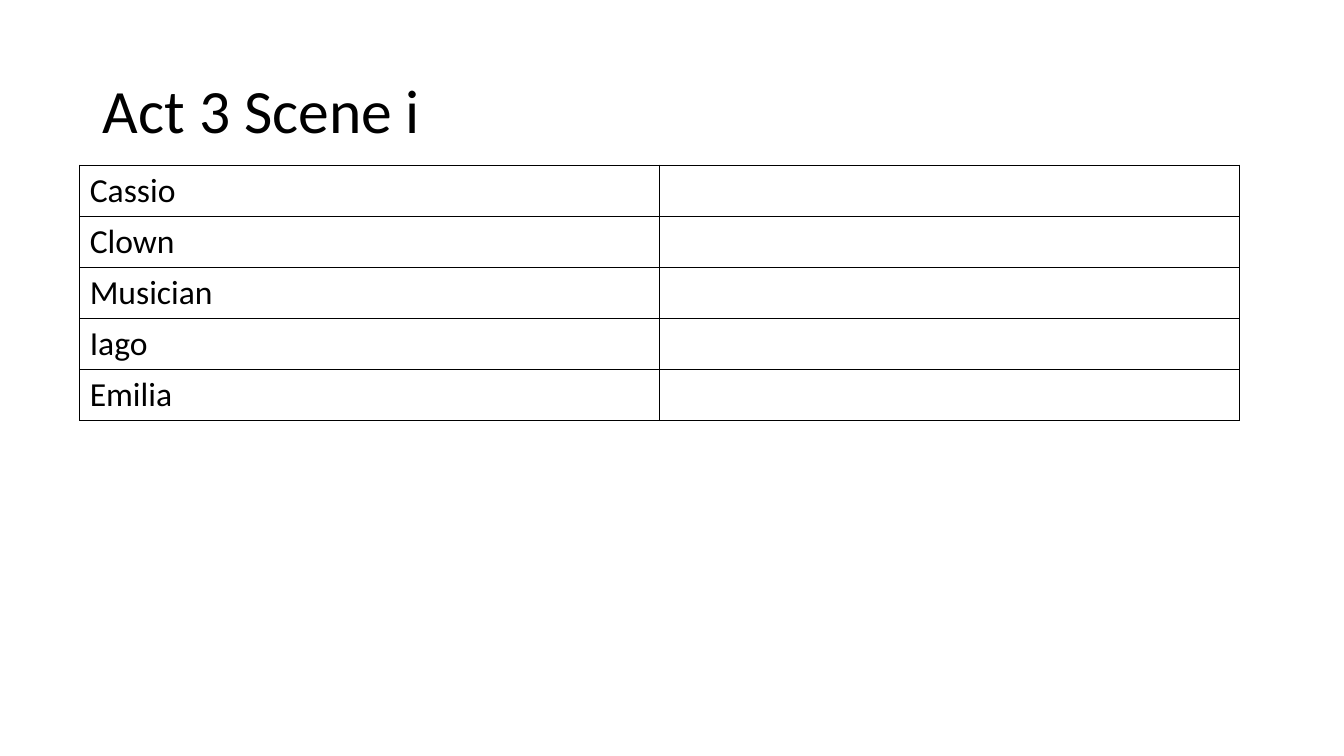
from dataclasses import dataclass

from lxml.etree import SubElement
from pptx import Presentation
from pptx.dml.color import RGBColor
from pptx.enum.text import MSO_ANCHOR, MSO_AUTO_SIZE, PP_ALIGN
from pptx.oxml.ns import qn
from pptx.util import Pt


@dataclass(frozen=True)
class Theme:
    font: str = "Calibri"
    ink: str = "000000"
    paper: str = "FFFFFF"
    title_size: int = 44
    cell_size: int = 24
    border_width: int = 1


theme = Theme()
PX = 9144
CHARACTERS = ["Cassio", "Clown", "Musician", "Iago", "Emilia"]
COLUMN_WIDTH, ROW_HEIGHT = 575, 50


def style_text(para, size):
    para.alignment = PP_ALIGN.LEFT
    for font in [para.font] + [span.font for span in para.runs]:
        font.name = theme.font
        font.size = Pt(size)
        font.color.rgb = RGBColor.from_string(theme.ink)


def add_borders(cell):
    properties = cell._tc.get_or_add_tcPr()
    for position, side in enumerate(["a:lnL", "a:lnR", "a:lnT", "a:lnB"]):
        line = SubElement(properties, qn(side), w=str(Pt(theme.border_width)))
        fill = SubElement(line, qn("a:solidFill"))
        SubElement(fill, qn("a:srgbClr"), val=theme.ink)
        properties.insert(position, line)


deck = Presentation()
deck.slide_width, deck.slide_height = 1333 * PX, 750 * PX
page = deck.slides.add_slide(deck.slide_layouts[5])
page.background.fill.solid()
page.background.fill.fore_color.rgb = RGBColor.from_string(theme.paper)

title = page.shapes.title
title.left, title.top, title.width, title.height = 92 * PX, 40 * PX, 1150 * PX, 145 * PX
title.text_frame.text = "Act 3 Scene i"
title.text_frame.word_wrap = True
title.text_frame.auto_size = MSO_AUTO_SIZE.NONE
title.text_frame.vertical_anchor = MSO_ANCHOR.MIDDLE
title_para = title.text_frame.paragraphs[0]
title_para.line_spacing = 0.9
style_text(title_para, theme.title_size)

table = page.shapes.add_table(
    len(CHARACTERS), 2, 79 * PX, 164 * PX,
    2 * COLUMN_WIDTH * PX, len(CHARACTERS) * ROW_HEIGHT * PX,
).table
table.first_row = False
table.horz_banding = False

for row, character in zip(table.rows, CHARACTERS):
    row.cells[0].text_frame.text = character
    for cell in row.cells:
        style_text(cell.text_frame.paragraphs[0], theme.cell_size)
        cell.fill.background()
        add_borders(cell)

deck.save("out.pptx")
